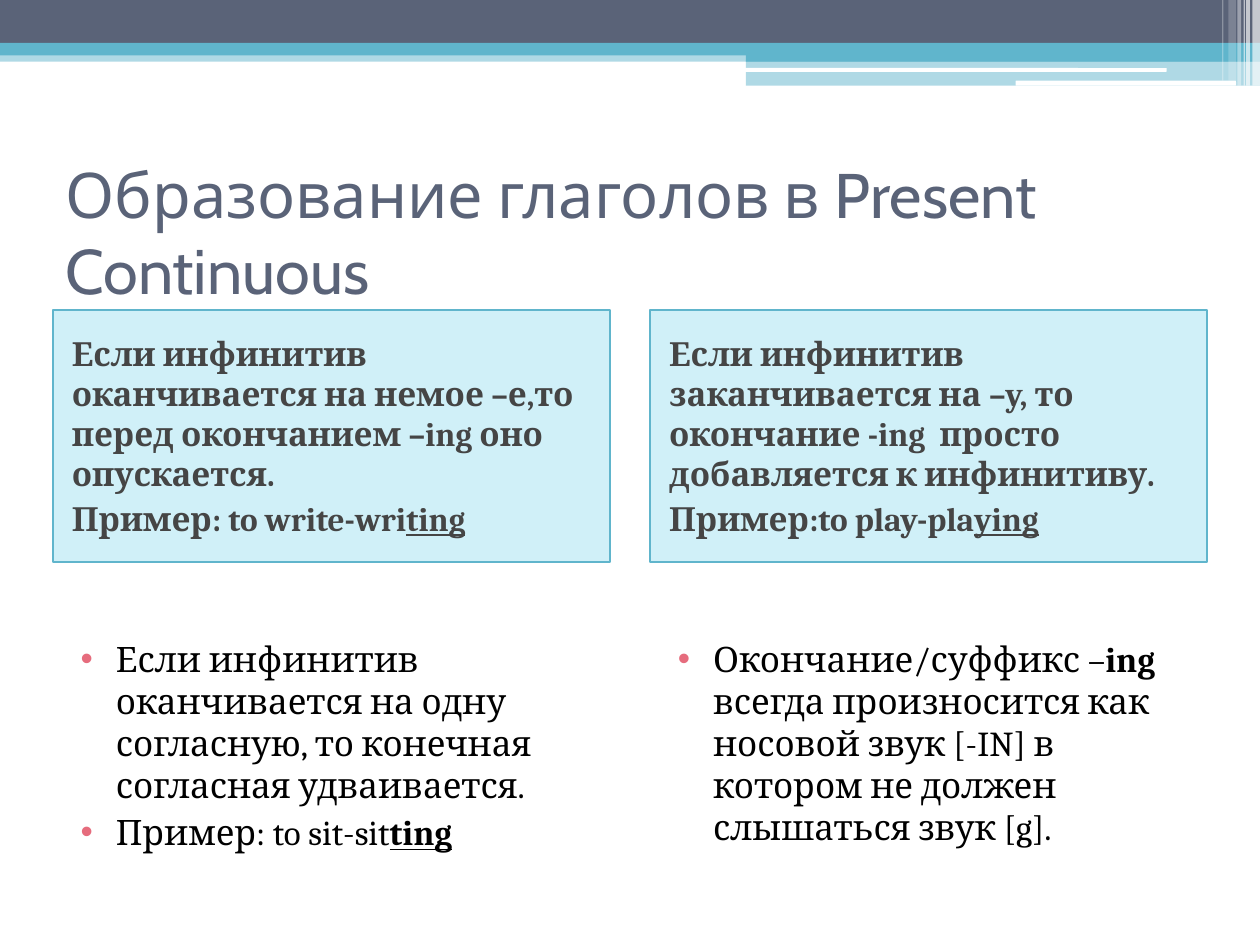
from lxml import etree
from pptx import Presentation
from pptx.dml.color import RGBColor
from pptx.enum.shapes import MSO_SHAPE as Shape
from pptx.enum.text import MSO_ANCHOR as Anchor, MSO_AUTO_SIZE as AutoSize, PP_ALIGN as Align
from pptx.oxml.ns import qn
from pptx.util import Inches, Pt

COLORS = {
    "slate": "5A6378",
    "teal": "60B5CC",
    "sky": "45C4E7",
    "white": "FFFFFF",
    "rule_text": "454545",
    "black": "000000",
    "bullet": "E66C7D",
}

BANDS = [
    (0, 0.4, 10, 0.09, "teal", 50),
    (0, 0, 10, 0.34, "slate", 100),
    (0, 0.34, 10, 0.1, "teal", 100),
    (5.92, 0.39, 4.08, 0.1, "teal", 100),
    (5.92, 0.48, 4.08, 0.2, "teal", 50),
]
ROUNDED_BANDS = [(5.91, 0.54, 3.35, 0.03), (8.06, 0.64, 1.75, 0.04)]
STRIPES = [
    (9.94, 0.06, 0.68, 65),
    (9.89, 0.03, 0.68, 65),
    (9.87, 0.01, 0.68, 60),
    (9.82, 0.03, 0.68, 40),
    (9.75, 0.06, 0.64, 20),
    (9.7, 0.01, 0.64, 30),
]

TITLE = "Образование глаголов в Present Continuous"
COLUMN_LEFTS = (0.42, 5.16)
COLUMN_WIDTH = 4.42

RULES = [
    [
        [("Если инфинитив оканчивается на немое –е,то перед окончанием –ing оно опускается.", "")],
        [("Пример: to write-wri", ""), ("ting", "u")],
    ],
    [
        [("Если инфинитив заканчивается на –y, то окончание -ing  просто добавляется к инфинитиву.", "")],
        [("Пример:to play-pla", ""), ("ying", "u")],
    ],
]
NOTES = [
    [
        [("Если инфинитив оканчивается на одну согласную, то конечная согласная удваивается.", "")],
        [("Пример: to sit-sit", ""), ("ting", "bu")],
    ],
    [
        [
            ("Окончание/суффикс –", ""),
            ("ing ", "b"),
            ("всегда произносится как носовой звук [-IN] в котором не должен слышаться звук [g].", ""),
        ],
    ],
]


def rgb(color):
    return RGBColor.from_string(COLORS[color])


def set_fill(shape, color, opacity=100):
    shape.fill.solid()
    shape.fill.fore_color.rgb = rgb(color)
    if opacity < 100:
        tint = shape.fill._xPr.find(qn("a:solidFill"))[0]
        etree.SubElement(tint, qn("a:alpha"), val=str(opacity * 1000))


def add_band(slide, left, top, width, height, color, opacity=100, kind=Shape.RECTANGLE):
    band = slide.shapes.add_shape(kind, Inches(left), Inches(top), Inches(width), Inches(height))
    band.shadow.inherit = False
    band.line.fill.background()
    set_fill(band, color, opacity)


def add_header(slide):
    for band in BANDS:
        add_band(slide, *band)
    for band in ROUNDED_BANDS:
        add_band(slide, *band, "white", kind=Shape.ROUNDED_RECTANGLE)
    for left, width, height, opacity in STRIPES:
        add_band(slide, left, 0, width, height, "white", opacity)


def place(holder, left, top, width, height, anchor):
    holder.left, holder.top = Inches(left), Inches(top)
    holder.width, holder.height = Inches(width), Inches(height)
    frame = holder.text_frame
    frame.word_wrap = True
    frame.auto_size = AutoSize.NONE
    frame.vertical_anchor = anchor
    return frame


def add_run(paragraph, text, font, size, color, bold=False, underline=False):
    run = paragraph.add_run()
    run.text = text
    run.font.name = font
    run.font.size = Pt(size)
    run.font.color.rgb = rgb(color)
    run.font.bold = bold
    run.font.underline = underline


def set_indent(paragraph, margin, hanging, bulleted):
    props = paragraph._p.get_or_add_pPr()
    props.set("marL", str(Inches(margin)))
    props.set("indent", str(-Inches(hanging)))
    if bulleted:
        bullet_color = etree.SubElement(props, qn("a:buClr"))
        etree.SubElement(bullet_color, qn("a:srgbClr"), val=COLORS["bullet"])
        etree.SubElement(props, qn("a:buFont"), typeface="Arial")
        etree.SubElement(props, qn("a:buChar"), char="•")
    else:
        etree.SubElement(props, qn("a:buNone"))


def fill_text(frame, paragraphs, size, color, bold=False, bulleted=False):
    for index, runs in enumerate(paragraphs):
        paragraph = frame.add_paragraph() if index else frame.paragraphs[0]
        paragraph.alignment = Align.LEFT
        paragraph.space_before = Pt(3)
        margin, hanging = (0.4, 0.28) if bulleted else (0.05, 0)
        set_indent(paragraph, margin, hanging, bulleted)
        for text, marks in runs:
            add_run(paragraph, text, "Cambria", size, color, bold or "b" in marks, "u" in marks)


def add_title(slide):
    frame = place(slide.shapes.title, 0.42, 1.25, 9.17, 1.17, Anchor.MIDDLE)
    heading = frame.paragraphs[0]
    heading.alignment = Align.LEFT
    add_run(heading, TITLE, "Cabin", 36, "slate")


def add_rule_box(holder, left, paragraphs):
    frame = place(holder, left, 2.46, COLUMN_WIDTH, 2, Anchor.MIDDLE)
    set_fill(holder, "sky", 25)
    holder.line.color.rgb = rgb("teal")
    holder.line.width = Pt(1)
    fill_text(frame, paragraphs, 19, "rule_text", bold=True)


def add_note_list(holder, left, paragraphs):
    frame = place(holder, left, 5.01, COLUMN_WIDTH, 2.2, Anchor.TOP)
    fill_text(frame, paragraphs, 20, "black", bulleted=True)


def main():
    deck = Presentation()
    deck.slide_width, deck.slide_height = Inches(10), Inches(7.5)
    comparison_layout = deck.slide_layouts[4]
    slide = deck.slides.add_slide(comparison_layout)
    add_header(slide)
    add_title(slide)
    for column, left in enumerate(COLUMN_LEFTS):
        add_rule_box(slide.placeholders[1 + 2 * column], left, RULES[column])
        add_note_list(slide.placeholders[2 + 2 * column], left, NOTES[column])
    deck.save("out.pptx")


if __name__ == "__main__":
    main()
